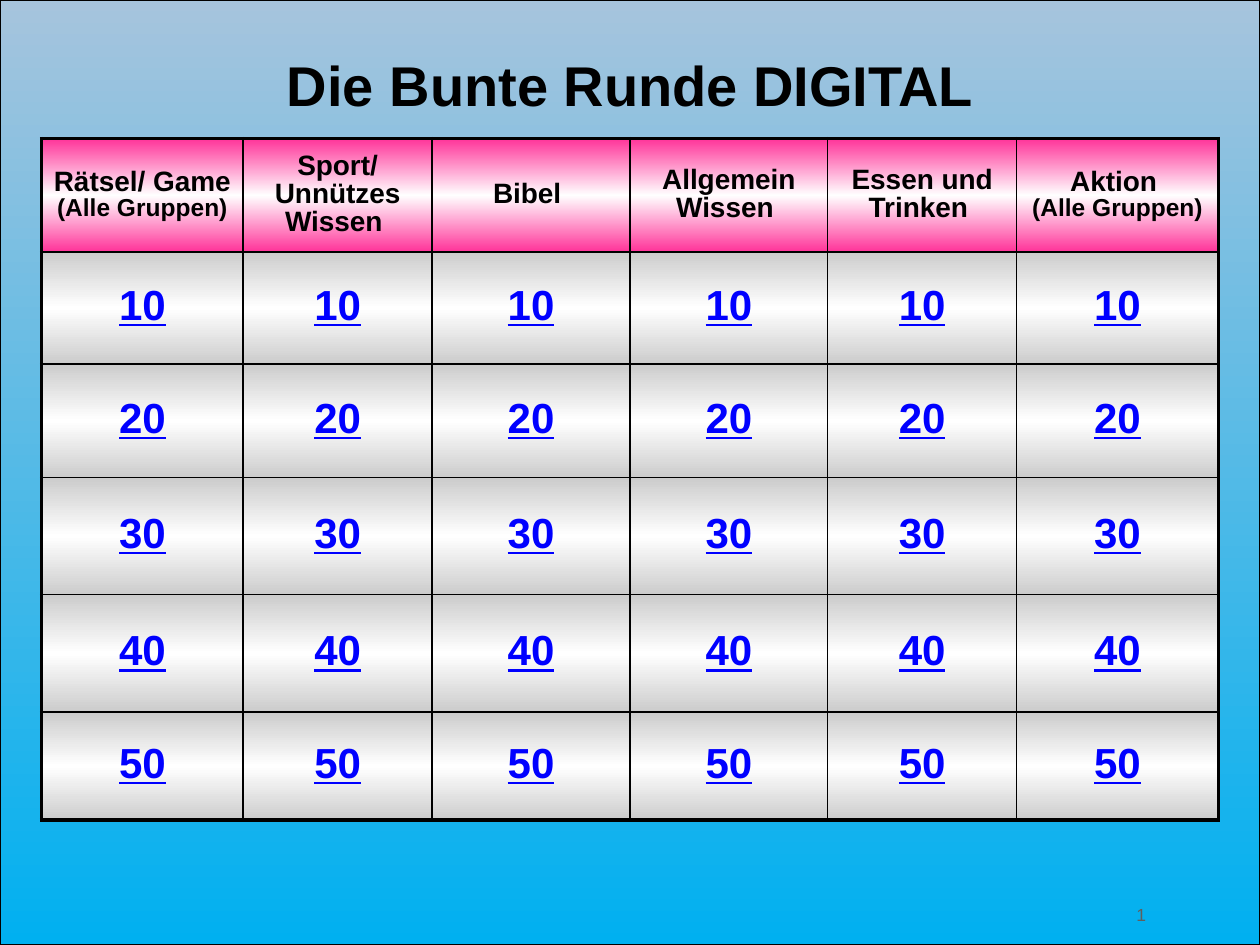
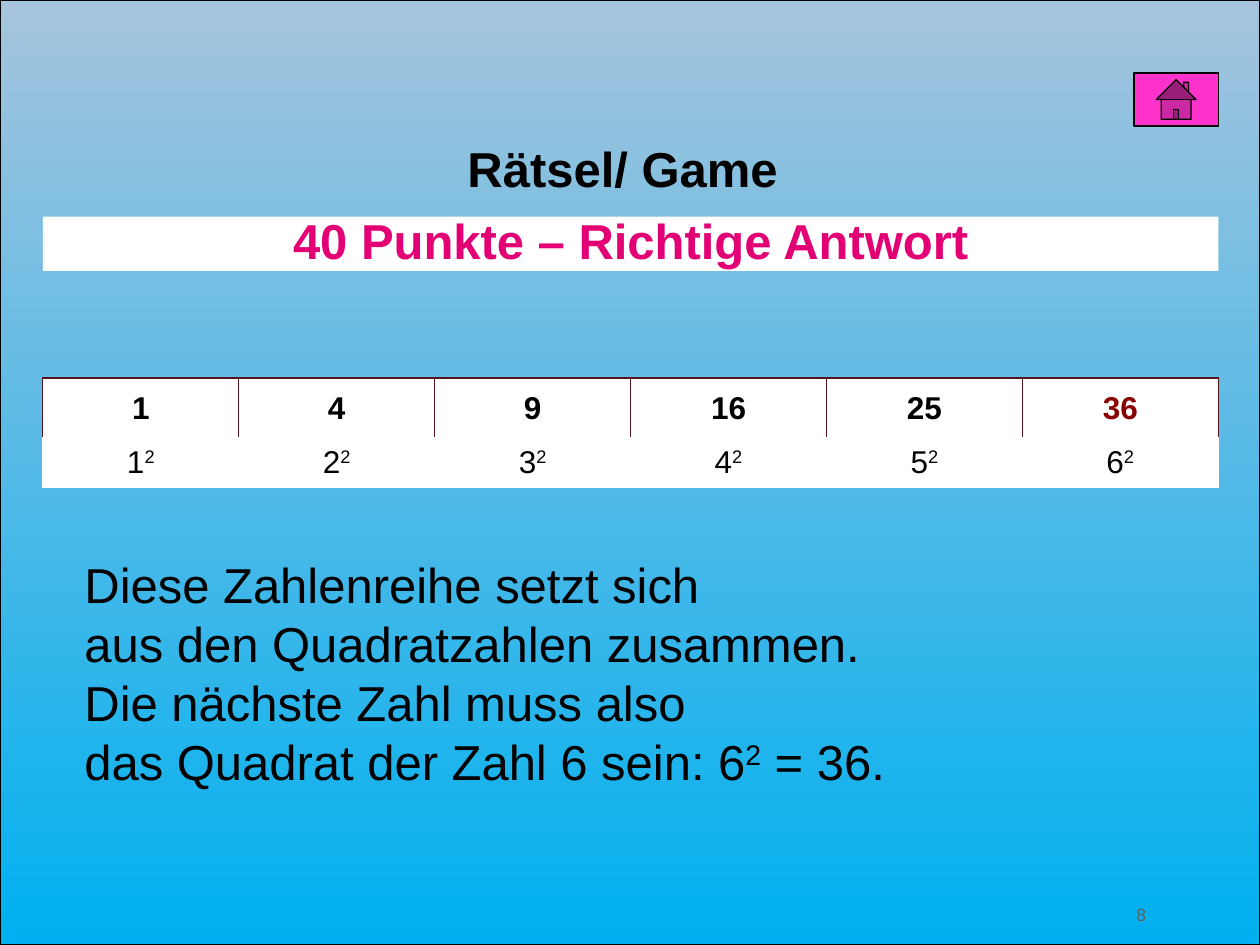
from dataclasses import dataclass
from typing import Optional

from lxml.etree import SubElement
from pptx import Presentation
from pptx.dml.color import RGBColor
from pptx.enum.shapes import MSO_SHAPE
from pptx.enum.text import MSO_ANCHOR, PP_ALIGN
from pptx.oxml.ns import qn
from pptx.util import Inches, Pt

COLORS = {
    "black": "000000",
    "white": "FFFFFF",
    "sky_top": "A6C4DD",
    "sky_bottom": "00B0F0",
    "pink": "FF3399",
    "silver": "CCCCCC",
    "link": "0000FF",
    "magenta": "E20074",
    "home": "FF33CC",
    "wine": "561420",
    "answer": "880000",
    "page": "5F5F5F",
}
FONT = "Arial"
SIDES = ("L", "R", "T", "B")
THIN, THICK = 1, 2.25
MARGIN, CONTENT_W = 0.34, 9.33


@dataclass
class Run:
    text: str
    size: float
    color: str = "black"
    bold: bool = False
    underline: bool = False
    superscript: bool = False


@dataclass
class Para:
    runs: list[Run]
    align: PP_ALIGN = PP_ALIGN.CENTER
    spacing: Optional[float] = None
    before: float = 0


@dataclass
class Box:
    left: float
    top: float
    width: float
    height: float

    def emu(self) -> tuple:
        return tuple(Inches(v) for v in (self.left, self.top, self.width, self.height))


@dataclass
class CellStyle:
    stops: list[str]
    line: str
    widths: dict[str, float]


def rgb(name: str) -> RGBColor:
    return RGBColor.from_string(COLORS[name])


def paint(fill, props, stops: list[str]) -> None:
    if len(stops) == 1:
        fill.solid()
        fill.fore_color.rgb = rgb(stops[0])
        return
    fill.gradient()
    fill.gradient_angle = 270
    gs_list = props.find(f".//{qn('a:gsLst')}")
    gs_list.clear()
    for i, name in enumerate(stops):
        gs = SubElement(gs_list, qn("a:gs"), pos=str(100000 * i // (len(stops) - 1)))
        SubElement(gs, qn("a:srgbClr"), val=COLORS[name])


def write(tf, paras: list[Para]) -> None:
    for i, para in enumerate(paras):
        p = tf.add_paragraph() if i else tf.paragraphs[0]
        p.alignment = para.align
        p.space_before = Pt(para.before)
        if para.spacing:
            p.line_spacing = para.spacing
        for run in para.runs:
            r = p.add_run()
            r.text = run.text.rstrip("\n")
            r.font.name = FONT
            r.font.size = Pt(run.size)
            r.font.bold = run.bold
            r.font.underline = run.underline
            r.font.color.rgb = rgb(run.color)
            if run.superscript:
                r.font._element.set("baseline", "30000")
            if run.text.endswith("\n"):
                p.add_line_break()
                SubElement(p._p[-1], qn("a:rPr"), sz=str(int(run.size * 100)))


def set_insets(tf, inset: float) -> None:
    tf.margin_left = tf.margin_right = tf.margin_top = tf.margin_bottom = Inches(inset)


def add_text(s, box: Box, paras: list[Para], inset: float = 0, wrap: bool = True,
             anchor: MSO_ANCHOR = MSO_ANCHOR.TOP):
    sp = s.shapes.add_textbox(*box.emu())
    tf = sp.text_frame
    set_insets(tf, inset)
    tf.word_wrap = wrap
    tf.vertical_anchor = anchor
    write(tf, paras)
    return sp


def add_box(s, kind: MSO_SHAPE, box: Box, stops: list[str], line: float):
    sp = s.shapes.add_shape(kind, *box.emu())
    sp.shadow.inherit = False
    paint(sp.fill, sp._element.spPr, stops)
    sp.line.color.rgb = rgb("black")
    sp.line.width = Pt(line)
    return sp


def style_cell(cell, style: CellStyle, para: Para) -> None:
    tc_pr = cell._tc.get_or_add_tcPr()
    for side in SIDES:
        ln = SubElement(tc_pr, qn(f"a:ln{side}"), w=str(Pt(style.widths[side])))
        fill = SubElement(ln, qn("a:solidFill"))
        SubElement(fill, qn("a:srgbClr"), val=COLORS[style.line])
    paint(cell.fill, tc_pr, style.stops)
    set_insets(cell, 0.05)
    cell.vertical_anchor = MSO_ANCHOR.MIDDLE
    write(cell.text_frame, [para])


def add_grid(s, left: float, top: float, cols: list[float], rows: list[float],
             paras: list[list[Para]], fills: list[list[str]], line: str,
             inner: float, outer: float) -> None:
    box = Box(left, top, sum(cols), sum(rows))
    tbl = s.shapes.add_table(len(rows), len(cols), *box.emu()).table
    tbl.first_row = tbl.horz_banding = False
    for col, width in zip(tbl.columns, cols):
        col.width = Inches(width)
    for i, height in enumerate(rows):
        tbl.rows[i].height = Inches(height)
        for j, para in enumerate(paras[i]):
            edges = {"L": j == 0, "R": j == len(cols) - 1,
                     "T": i == 0, "B": i == len(rows) - 1}
            widths = {side: outer if edge else inner for side, edge in edges.items()}
            style_cell(tbl.cell(i, j), CellStyle(fills[i], line, widths), para)


def start_slide(prs, number: str):
    s = prs.slides.add_slide(prs.slide_layouts[6])
    add_box(s, MSO_SHAPE.RECTANGLE, Box(0, 0, 10, 7.5), ["sky_top", "sky_bottom"], 1)
    add_text(s, Box(9.02, 7.22, 0.14, 0.14),
             [Para([Run(number, 10, "page")], PP_ALIGN.LEFT, Pt(9))], wrap=False)
    return s


def heading(text: str, size: float, color: str = "black", before: float = 0) -> Para:
    return Para([Run(text, size, color, bold=True)], spacing=0.9, before=before)


def build_board(prs) -> None:
    s = start_slide(prs, "1")
    all_groups = Run("(Alle Gruppen)", 14, bold=True)
    categories = ["Rätsel/ Game\n", "Sport/ Unnützes Wissen ", "Bibel ",
                  "Allgemein Wissen ", "Essen und Trinken ", "Aktion \n"]
    header = [heading(name, 16, before=4) for name in categories]
    for para in (header[0], header[-1]):
        para.runs.append(all_groups)
    points = [
        [Para([Run(str(value), 24, "link", True, True)], spacing=0.9, before=7)
         for _ in categories]
        for value in range(10, 60, 10)
    ]
    fills = [["pink", "white", "pink"]] + [["silver", "white", "silver"]] * len(points)
    add_grid(s, 0.33, 1.1, [1.6, 1.5, 1.57, 1.57, 1.5, 1.6],
             [0.9, 0.89, 0.9, 0.93, 0.93, 0.86], [header] + points, fills,
             "black", THIN, THICK)
    add_text(s, Box(MARGIN, 0.46, CONTENT_W, 0.5), [heading("Die Bunte Runde DIGITAL", 32)])


def build_answer(prs) -> None:
    s = start_slide(prs, "8")
    banner = add_text(s, Box(MARGIN, 1.72, CONTENT_W, 0.43),
                      [heading("40 Punkte – Richtige Antwort", 28, "magenta", 16)])
    paint(banner.fill, banner._element.spPr, ["white"])
    add_box(s, MSO_SHAPE.ACTION_BUTTON_HOME, Box(9, 0.58, 0.67, 0.42), ["home"], 0.75)
    add_text(s, Box(0.33, 1.15, CONTENT_W, 0.43), [heading("Rätsel/ Game ", 28, before=16)])

    roots = range(1, 7)
    cols = [CONTENT_W / len(roots)] * len(roots)
    squares = [Para([Run(str(n * n), 18, "answer" if n == roots[-1] else "black", True)])
               for n in roots]
    powers = [Para([Run(str(n), 18), Run("2", 18, superscript=True)]) for n in roots]
    for top, height, paras, line in ((3, 0.49, squares, "wine"), (3.47, 0.4, powers, "white")):
        add_grid(s, MARGIN, top, cols, [height], [paras], [["white"]], line, 0.75, 0.75)

    lines = ["Diese Zahlenreihe setzt sich ", "aus den Quadratzahlen zusammen. ",
             "Die nächste Zahl muss also ", "das Quadrat der Zahl 6 sein: 6"]
    explanation = [Para([Run(text, 28)], PP_ALIGN.JUSTIFY) for text in lines]
    explanation[-1].runs += [Run("2", 28, superscript=True), Run(" = 36.", 28)]
    add_text(s, Box(0.62, 4.4, 6.49, 1.87), explanation, 0.05, False, MSO_ANCHOR.MIDDLE)


def main() -> None:
    prs = Presentation()
    prs.slide_width, prs.slide_height = Inches(10), Inches(7.5)
    build_board(prs)
    build_answer(prs)
    prs.save("out.pptx")


if __name__ == "__main__":
    main()
